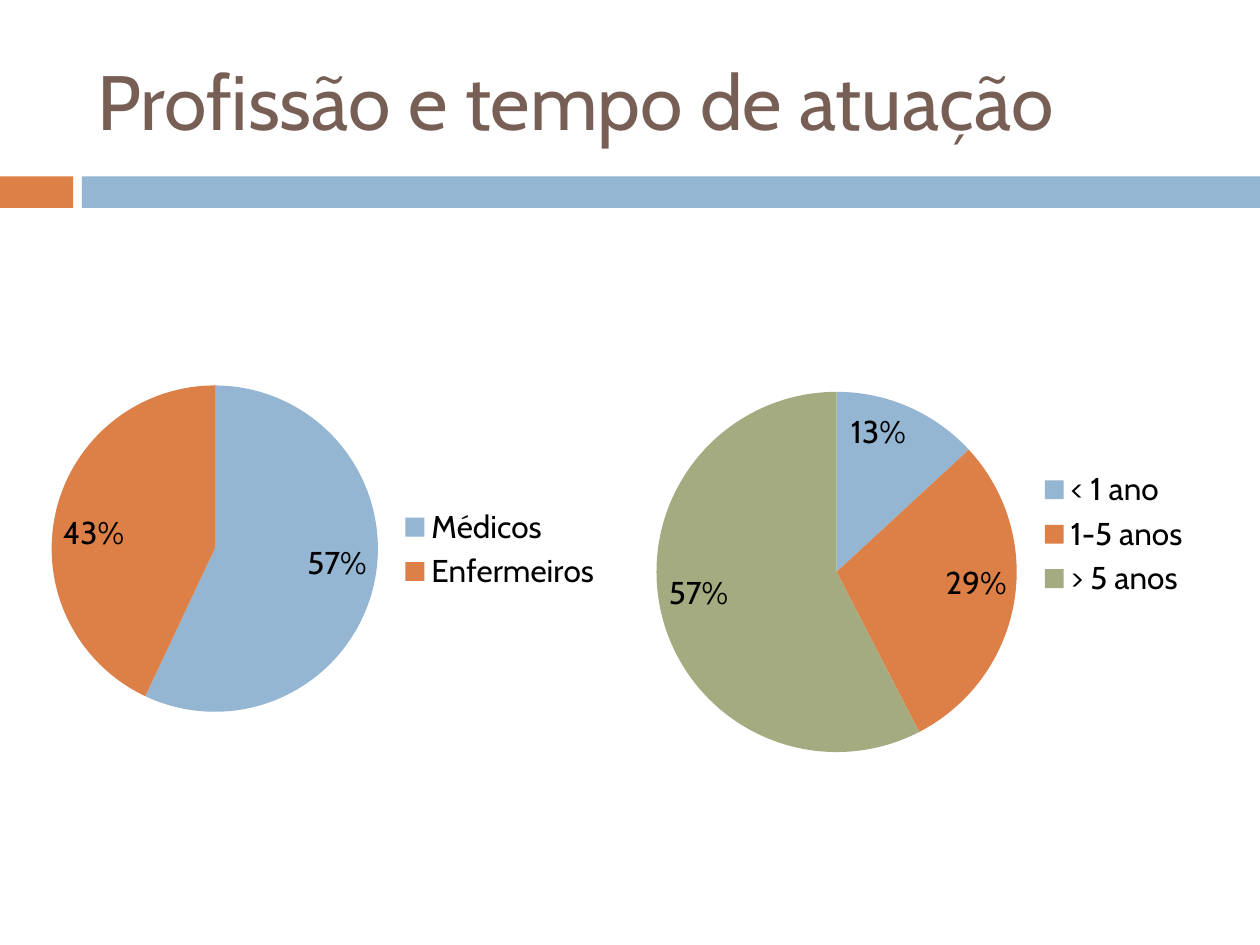
from pptx import Presentation
from pptx.chart.data import CategoryChartData
from pptx.dml.color import RGBColor
from pptx.enum import chart as ch, shapes, text
from pptx.util import Inches, Pt
from lxml import etree

FONT = "Cabin"
BLUE = RGBColor(0x94, 0xB6, 0xD2)
ORANGE = RGBColor(0xDD, 0x80, 0x47)
GREEN = RGBColor(0xA5, 0xAB, 0x81)
BROWN = RGBColor(0x77, 0x5F, 0x55)
BLACK = RGBColor(0, 0, 0)
SLICE_COLORS = (BLUE, ORANGE, GREEN)

HEADING = "Profissão e tempo de atuação"
BANDS = [(0, 0.58, ORANGE), (0.65, 9.35, BLUE)]
PIES = [
    {
        "shares": {"< 1 ano": 13, "1-5 anos": 29, "> 5 anos": 57},
        "frame": (5.08, 1.74, 4.47, 5),
        "disc": (5.21, 3.11, 2.86),
    },
    {
        "shares": {"Médicos": 57, "Enfermeiros": 43},
        "frame": (0.28, 2.65, 4.6, 3.42),
        "disc": (0.41, 3.06, 2.59),
    },
]


def place_disc(pie_chart, frame, disc):
    left, top, width, height = frame
    disc_left, disc_top, diameter = disc
    plot_area = pie_chart.plots[0]._element.getparent()
    ns = etree.QName(plot_area).namespace
    for old_layout in plot_area.findall(f"{{{ns}}}layout"):
        plot_area.remove(old_layout)
    layout = etree.Element(f"{{{ns}}}layout")
    manual = etree.SubElement(layout, f"{{{ns}}}manualLayout")
    settings = {
        "layoutTarget": "inner",
        "xMode": "edge",
        "yMode": "edge",
        "x": (disc_left - left) / width,
        "y": (disc_top - top) / height,
        "w": diameter / width,
        "h": diameter / height,
    }
    for tag, value in settings.items():
        etree.SubElement(manual, f"{{{ns}}}{tag}").set("val", str(value))
    plot_area.insert(0, layout)


def add_pie(slide, shares, frame, disc):
    data = CategoryChartData()
    data.categories = list(shares)
    data.add_series("Series 1", list(shares.values()))
    pie_chart = slide.shapes.add_chart(
        ch.XL_CHART_TYPE.PIE, *map(Inches, frame), data
    ).chart
    pie_chart.has_title = False
    pie_chart.font.name = FONT
    pie_chart.font.size = Pt(18)
    pie_chart.font.color.rgb = BLACK
    pie_chart.has_legend = True
    pie_chart.legend.position = ch.XL_LEGEND_POSITION.RIGHT
    pie_chart.legend.include_in_layout = False

    pie = pie_chart.plots[0]
    pie.vary_by_categories = True
    for index, color in zip(range(len(shares)), SLICE_COLORS):
        fill = pie.series[0].points[index].format.fill
        fill.solid()
        fill.fore_color.rgb = color
    pie.has_data_labels = True
    labels = pie.data_labels
    labels.show_value = True
    labels.show_percentage = False
    labels.number_format = '0"%"'
    labels.number_format_is_linked = False
    labels.position = ch.XL_LABEL_POSITION.INSIDE_END
    place_disc(pie_chart, frame, disc)


def main():
    deck = Presentation()
    deck.slide_width, deck.slide_height = Inches(10), Inches(7.5)
    slide = deck.slides.add_slide(deck.slide_layouts[5])

    for left, width, color in BANDS:
        band = slide.shapes.add_shape(
            shapes.MSO_SHAPE.RECTANGLE,
            Inches(left), Inches(1.4), Inches(width), Inches(0.25),
        )
        band.shadow.inherit = False
        band.fill.solid()
        band.fill.fore_color.rgb = color
        band.line.fill.background()

    title = slide.shapes.title
    title.left, title.top = Inches(0.67), Inches(0.25)
    title.width, title.height = Inches(8.92), Inches(1.08)
    title.text_frame.vertical_anchor = text.MSO_ANCHOR.MIDDLE
    paragraph = title.text_frame.paragraphs[0]
    paragraph.alignment = text.PP_ALIGN.LEFT
    heading = paragraph.add_run()
    heading.text = HEADING
    heading.font.name = FONT
    heading.font.size = Pt(44)
    heading.font.color.rgb = BROWN

    for pie in PIES:
        add_pie(slide, **pie)
    deck.save("out.pptx")


if __name__ == "__main__":
    main()
